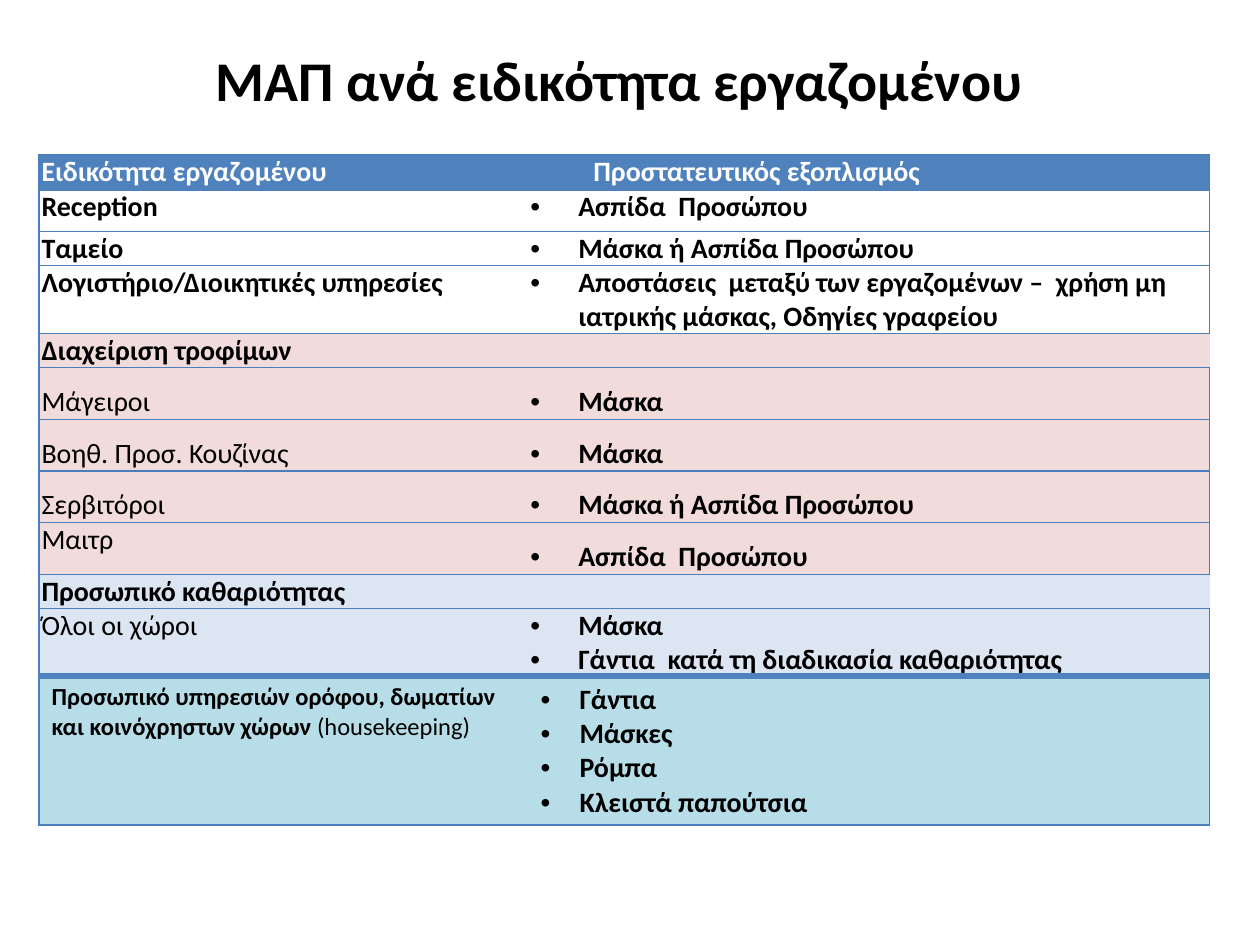
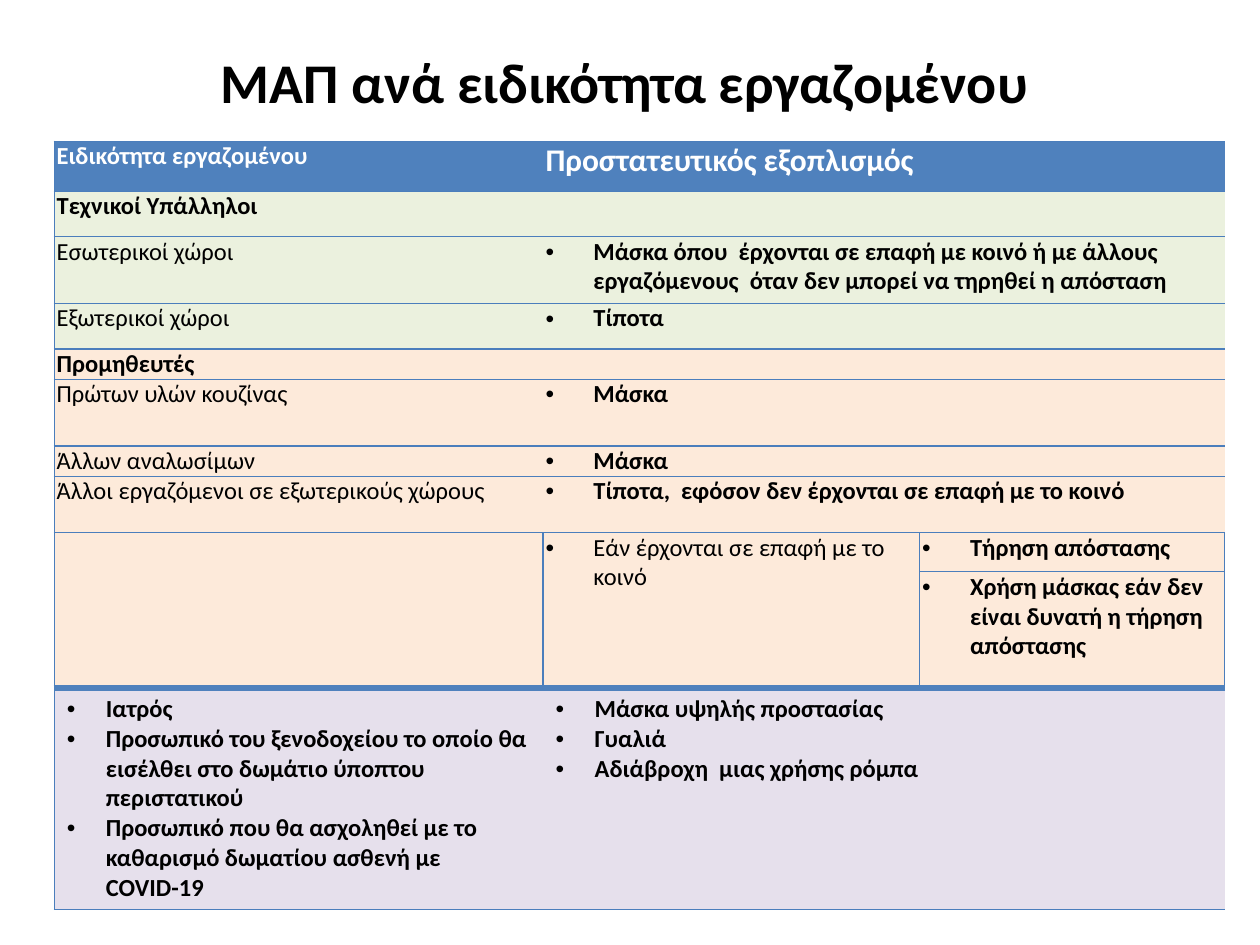
from lxml.etree import SubElement
from pptx import Presentation
from pptx.dml.color import RGBColor
from pptx.enum.text import MSO_ANCHOR, PP_ALIGN
from pptx.oxml.ns import qn
from pptx.util import Inches, Pt

HUES = {
    "text": "000000", "white": "FFFFFF", "head": "4F81BD", "line": "4B7EBC",
    "rose": "F2DCDB", "blue": "DCE6F2", "aqua": "B7DEE8",
    "green": "EBF1DE", "peach": "FDEADA", "lilac": "E6E0EC",
}
TIGHT = {"margin_left": Inches(0.02), "margin_right": Inches(0.02),
         "margin_top": 0, "margin_bottom": 0}
WIDE = {"margin_left": Inches(0.1), "margin_right": Inches(0.1),
        "margin_top": Inches(0.05), "margin_bottom": Inches(0.05)}
LOOKS = {
    "head": {"hue": "white"},
    "shift": {"hue": "white", "left": 0.5},
    "large": {"hue": "white", "size": 18},
    "main": {},
    "plain": {"bold": False},
    "loose": {"bold": False, "space": 1.5},
    "item": {"left": 0.38, "dot": True},
    "light": {"left": 0.38, "dot": True, "bold": False},
    "airy": {"left": 0.38, "dot": True, "space": 1.5},
    "staff": {"size": 14, "pad": WIDE},
    "list": {"left": 0.31, "dot": True, "pad": WIDE},
}
TITLE = "ΜΑΠ ανά ειδικότητα εργαζομένου "
ROLE = ("Ειδικότητα εργαζομένου", "head")
GEAR = "Προστατευτικός εξοπλισμός"

PAGES = [
    {"title": (0.83, 0.31, 8.27, 0.64), "at": (0.31, 1.23), "size": 16,
     "cols": (3.88, 5.41), "rows": [
        (0.28, "head", ROLE, (GEAR, "shift")),
        (0.33, None, ("Reception", "main"), ("Ασπίδα  Προσώπου", "item")),
        (0.27, None, ("Ταμείο", "main"), ("Μάσκα ή Ασπίδα Προσώπου", "item")),
        (0.54, None, ("Λογιστήριο/Διοικητικές υπηρεσίες", "main"),
         ("Αποστάσεις  μεταξύ των εργαζομένων –  χρήση μη ιατρικής μάσκας, Οδηγίες γραφείου", "item")),
        (0.27, "rose", ("Διαχείριση τροφίμων", "main")),
        (0.41, "rose", ("Μάγειροι", "loose"), ("Μάσκα", "airy")),
        (0.41, "rose", ("Βοηθ. Προσ. Κουζίνας", "loose"), ("Μάσκα", "airy")),
        (0.41, "rose", ("Σερβιτόροι", "loose"), ("Μάσκα ή Ασπίδα Προσώπου", "airy")),
        (0.41, "rose", ("Μαιτρ", "plain"), ("Ασπίδα  Προσώπου", "airy")),
        (0.27, "blue", ("Προσωπικό καθαριότητας", "main")),
        (0.54, "blue", ("Όλοι οι χώροι", "plain"),
         ("Μάσκα\nΓάντια  κατά τη διαδικασία καθαριότητας", "item")),
        (1.18, "aqua",
         ("Προσωπικό υπηρεσιών ορόφου, δωματίων και κοινόχρηστων χώρων |(housekeeping)", "staff"),
         ("Γάντια\nΜάσκες\nΡόμπα\nΚλειστά παπούτσια", "list")),
     ]},
    {"title": (0.51, 0.13, 9, 1.02), "at": (0.43, 1.12), "size": 14,
     "cols": (3.88, 2.99, 2.42), "rows": [
        (0.4, "head", ROLE, (GEAR, "large")),
        (0.36, "green", ("Τεχνικοί Υπάλληλοι", "main")),
        (0.53, "green", ("Εσωτερικοί χώροι", "plain"),
         ("Μάσκα όπου  έρχονται σε επαφή με κοινό ή με άλλους εργαζόμενους  όταν δεν μπορεί να τηρηθεί η απόσταση", "item")),
        (0.36, "green", ("Εξωτερικοί χώροι", "plain"), ("Τίποτα", "item")),
        (0.24, "peach", ("Προμηθευτές", "main")),
        (0.53, "peach", ("Πρώτων υλών κουζίνας", "plain"), ("Μάσκα", "item")),
        (0.24, "peach", ("Άλλων αναλωσίμων", "plain"), ("Μάσκα", "item")),
        (0.45, "peach", ("Άλλοι εργαζόμενοι σε εξωτερικούς χώρους", "plain"),
         ("Τίποτα,  εφόσον δεν έρχονται σε επαφή με το κοινό", "item")),
        (0.31, "peach", ("", "plain"), ("Εάν έρχονται σε επαφή με το κοινό", "light"),
         ("Τήρηση απόστασης", "item")),
        (0.92, "peach", None, None,
         ("Χρήση μάσκας εάν δεν είναι δυνατή η τήρηση απόστασης", "item")),
        (1.76, "lilac",
         ("Ιατρός\nΠροσωπικό του ξενοδοχείου το οποίο θα εισέλθει στο δωμάτιο ύποπτου περιστατικού\n"
          "Προσωπικό που θα ασχοληθεί με το καθαρισμό δωματίου ασθενή με COVID-19", "list"),
         ("Μάσκα υψηλής προστασίας\nΓυαλιά\nΑδιάβροχη  μιας χρήσης ρόμπα", "list")),
     ]},
]


def write(frame, text, size, bold=True, hue="text", left=0, dot=False, space=None, align=None):
    for i, line in enumerate(text.split("\n")):
        para = frame.add_paragraph() if i else frame.paragraphs[0]
        para.alignment, para.line_spacing = align, space
        props = para._p.get_or_add_pPr()
        if left:
            props.set("marL", str(Inches(left)))
            props.set("indent", str(-Inches(left) if dot else 0))
        if dot:
            SubElement(props, qn("a:buFont"), typeface="Arial")
            SubElement(props, qn("a:buChar"), char="•")
        for j, part in enumerate(line.split("|")):
            if not part:
                continue
            run = para.add_run()
            run.text = part
            form = {"name": "Calibri", "size": Pt(size), "bold": bold and j == 0}
            for key, val in form.items():
                setattr(run.font, key, val)
            run.font.color.rgb = RGBColor.from_string(HUES[hue])


def edge(cell, side, width, hue):
    line = SubElement(cell._tc.get_or_add_tcPr(), qn("a:ln" + side), w=str(Pt(width)))
    if width:
        fill = SubElement(line, qn("a:solidFill"))
        SubElement(fill, qn("a:srgbClr"), val=HUES[hue])
    else:
        SubElement(line, qn("a:noFill"))


deck = Presentation()
deck.slide_width, deck.slide_height = Inches(10), Inches(7.5)

for page in PAGES:
    slide = deck.slides.add_slide(deck.slide_layouts[6])
    box = slide.shapes.add_textbox(*[Inches(n) for n in page["title"]])
    box.text_frame.word_wrap = True
    box.text_frame.vertical_anchor = MSO_ANCHOR.MIDDLE
    write(box.text_frame, TITLE, 32, align=PP_ALIGN.CENTER)

    cols, rows = page["cols"], page["rows"]
    last, end = len(rows) - 1, len(cols) - 1
    area = (*page["at"], sum(cols), sum(row[0] for row in rows))
    grid = slide.shapes.add_table(len(rows), len(cols), *[Inches(n) for n in area]).table
    grid.first_row = grid.horz_banding = False
    for c, width in enumerate(cols):
        grid.columns[c].width = Inches(width)

    for r, (height, tint, *cells) in enumerate(rows):
        grid.rows[r].height = Inches(height)
        split = len(cells) == 3
        for c in range(len(cols)):
            cell = grid.cell(r, c)
            for key, val in TIGHT.items():
                setattr(cell, key, val)
            edge(cell, "L", 0.75 if c == 0 or split else 0, "line")
            edge(cell, "R", 0.75 if c == end or split else 0, "line")
            for side, row in (("T", r), ("B", r + 1)):
                thick = row == last
                edge(cell, side, 4 if thick else 0.75, "head" if thick else "line")
            if tint:
                cell.fill.solid()
                cell.fill.fore_color.rgb = RGBColor.from_string(HUES[tint])
            else:
                cell.fill.background()
        for c, item in enumerate(cells):
            cell = grid.cell(r, c)
            if item is None:
                grid.cell(r - 1, c).merge(cell)
                continue
            text, name = item
            look = {"size": page["size"], **LOOKS[name]}
            for key, val in look.pop("pad", TIGHT).items():
                setattr(cell, key, val)
            write(cell.text_frame, text, **look)
        if len(cells) <= end:
            grid.cell(r, len(cells) - 1).merge(grid.cell(r, end))

deck.save("out.pptx")
